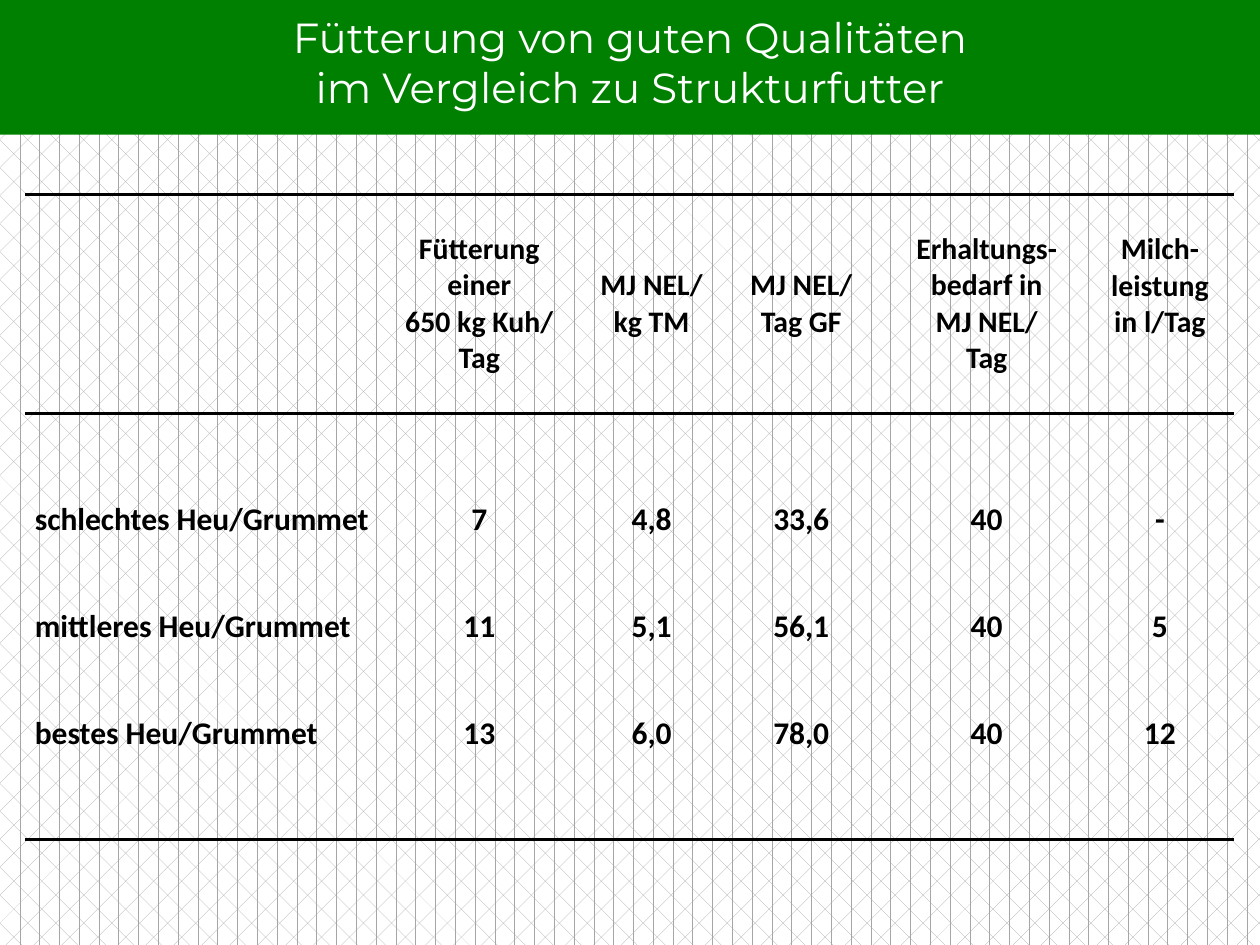
from dataclasses import dataclass

from lxml import etree
from pptx import Presentation
from pptx.dml.color import RGBColor
from pptx.enum.dml import MSO_PATTERN
from pptx.enum.shapes import MSO_CONNECTOR, MSO_SHAPE
from pptx.enum.text import MSO_ANCHOR, PP_ALIGN
from pptx.oxml.ns import qn
from pptx.util import Pt

LEFT, CENTER = PP_ALIGN.LEFT, PP_ALIGN.CENTER
MIDDLE = MSO_ANCHOR.MIDDLE
STRAIGHT, RECT = MSO_CONNECTOR.STRAIGHT, MSO_SHAPE.RECTANGLE
DIVOT = MSO_PATTERN.DIVOT

COLORS = {"green": "008000", "white": "FFFFFF", "black": "000000", "grey": "A6A6A6"}
NO_STYLE = "{2D5ABB26-0587-4C30-8999-92F81FD0307C}"
SLIDE_W, SLIDE_H = 720, 540
TABLE_LEFT, TABLE_TOP = 14.4, 110.9
COLUMN_WIDTHS = (197, 125, 72, 99, 113, 85)


@dataclass
class Row:
    cells: tuple[str, ...]
    height: float
    size: float = 18
    pad_top: float = 0
    pad_bottom: float = 0


ROWS = (
    Row(("", "Fütterung\neiner\n650 kg Kuh/\nTag", "MJ NEL/\nkg TM", "MJ NEL/\nTag GF",
         "Erhaltungs-\nbedarf in\nMJ NEL/\nTag", "Milch-\nleistung\nin l/Tag"), 125.3, size=17),
    Row(("schlechtes Heu/Grummet", "7", "4,8", "33,6", "40", "-"), 91.4, pad_top=30.2),
    Row(("mittleres Heu/Grummet", "11", "5,1", "56,1", "40", "5"), 61.2),
    Row(("bestes Heu/Grummet", "13", "6,0", "78,0", "40", "12"), 90.7, pad_bottom=29.5),
)
HEADER_LINE = 20.3  # line pitch of the header text


def rgb(name: str) -> RGBColor:
    return RGBColor.from_string(COLORS[name])


def write(tf, text: str, *, font: str, size: float, color: str,
          bold: bool = False, align=CENTER) -> None:
    """Fill a text frame, one paragraph per line."""
    tf.word_wrap = True
    tf.text = text
    for p in tf.paragraphs:
        p.alignment = align
        p.font.size = Pt(size)
        for r in p.runs:
            r.font.name, r.font.size, r.font.bold = font, Pt(size), bold
            r.font.color.rgb = rgb(color)


def add_rule(s, y: float, width: float) -> None:
    line = s.shapes.add_connector(STRAIGHT, Pt(TABLE_LEFT), Pt(y), Pt(TABLE_LEFT + width), Pt(y))
    line.line.color.rgb = rgb("black")
    line.line.width = Pt(1.75)
    etree.SubElement(line._element.spPr, qn("a:effectLst"))


def add_feed_table(s) -> None:
    height = sum(row.height for row in ROWS)
    frame = s.shapes.add_table(len(ROWS), len(COLUMN_WIDTHS), Pt(TABLE_LEFT), Pt(TABLE_TOP),
                               Pt(sum(COLUMN_WIDTHS)), Pt(height))
    table = frame.table
    table.first_row = table.horz_banding = False
    table._tbl.tblPr.find(qn("a:tableStyleId")).text = NO_STYLE
    for column, width in zip(table.columns, COLUMN_WIDTHS):
        column.width = Pt(width)
    for i, row in enumerate(ROWS):
        table.rows[i].height = Pt(row.height)
        for j, text in enumerate(row.cells):
            cell = table.cell(i, j)
            cell.fill.background()
            cell.vertical_anchor = MIDDLE
            cell.margin_left = Pt(0 if j else 5.5)
            cell.margin_right = Pt(0)
            cell.margin_top, cell.margin_bottom = Pt(row.pad_top), Pt(row.pad_bottom)
            write(cell.text_frame, text, font="Calibri", size=row.size, color="black",
                  bold=True, align=CENTER if j else LEFT)
    # The last heading starts level with the four-line headings
    table.cell(0, len(COLUMN_WIDTHS) - 1).margin_bottom = Pt(HEADER_LINE)


def main() -> None:
    prs = Presentation()
    prs.slide_width, prs.slide_height = Pt(SLIDE_W), Pt(SLIDE_H)
    s = prs.slides.add_slide(prs.slide_layouts[6])

    # Patterned background
    fill = s.background.fill
    fill.patterned()
    fill.pattern = DIVOT
    fill.fore_color.rgb, fill.back_color.rgb = rgb("grey"), rgb("white")

    # Title band
    band = s.shapes.add_shape(RECT, 0, 0, Pt(SLIDE_W), Pt(77))
    band.shadow.inherit = False
    band.fill.solid()
    band.fill.fore_color.rgb = rgb("green")
    band.line.fill.background()
    title = s.shapes.add_textbox(Pt(14), Pt(4.3), Pt(692), Pt(62))
    title.text_frame.vertical_anchor = MIDDLE
    write(title.text_frame, "Fütterung von guten Qualitäten\nim Vergleich zu Strukturfutter",
          font="Montserrat", size=24, color="white")

    # Table with rules above and below the header and at the foot
    add_feed_table(s)
    header_foot = TABLE_TOP + ROWS[0].height
    table_foot = TABLE_TOP + sum(row.height for row in ROWS)
    for y in (TABLE_TOP, header_foot, table_foot):
        add_rule(s, y, sum(COLUMN_WIDTHS))

    prs.save("out.pptx")


if __name__ == "__main__":
    main()
